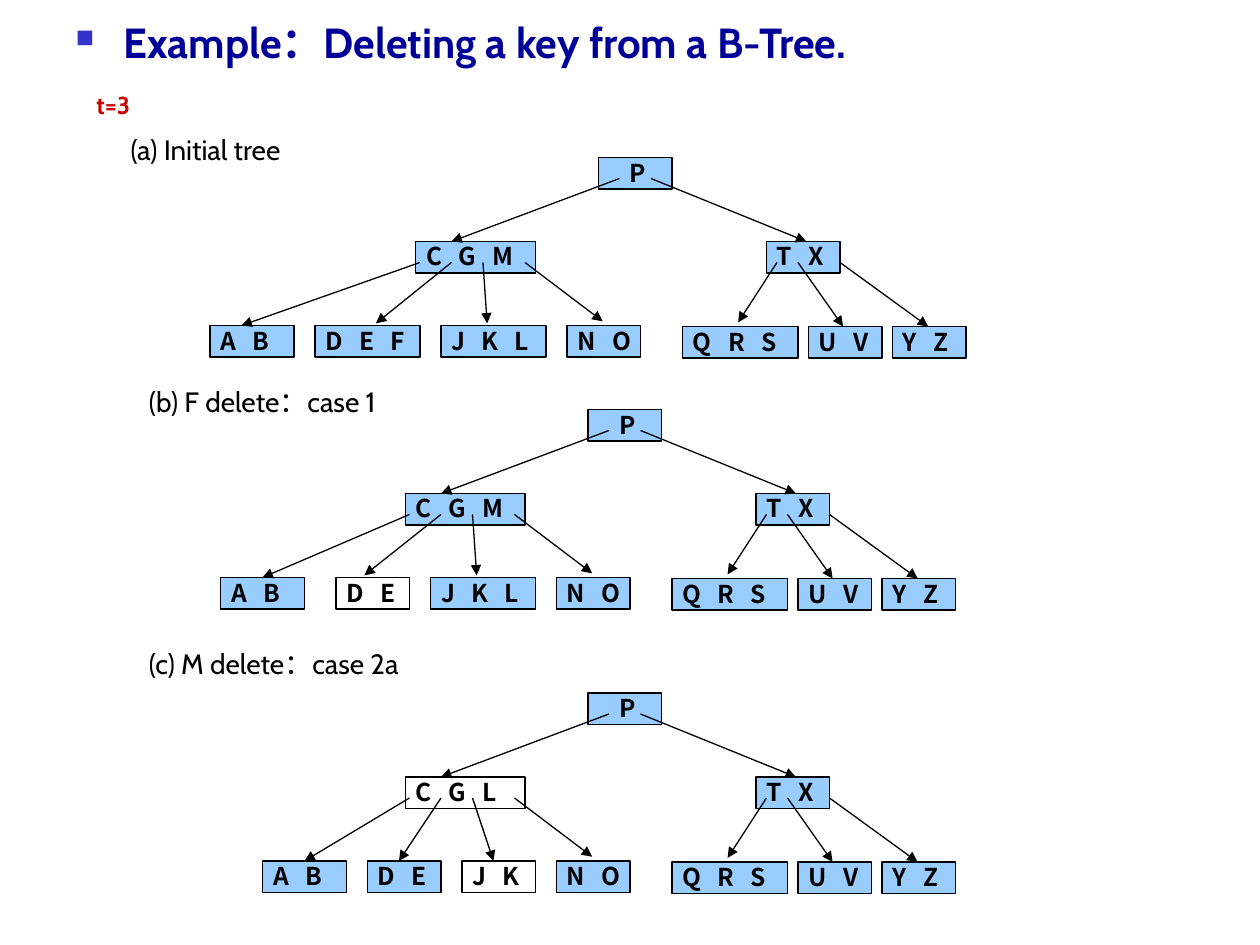
"""Build a slide showing key deletions from a B-tree."""

from dataclasses import dataclass, replace

from lxml.etree import SubElement
from pptx import Presentation
from pptx.dml.color import RGBColor
from pptx.enum.shapes import MSO_CONNECTOR, MSO_SHAPE
from pptx.enum.text import MSO_ANCHOR, MSO_AUTO_SIZE, PP_ALIGN
from pptx.oxml.ns import qn
from pptx.slide import Slide
from pptx.text.text import TextFrame
from pptx.util import Inches, Length, Pt


@dataclass(frozen=True)
class Theme:
    """Colours, fonts and sizes of the slide."""

    title: str = "000099"
    bullet: str = "3333CC"
    accent: str = "CC0000"
    ink: str = "000000"
    node: str = "99CCFF"
    text_font: str = "Cabin"
    key_font: str = "Noto Sans CJK TC"
    title_size: float = 24
    label_size: float = 16
    key_size: float = 14
    key_spacing: float = 3.1
    line_width: float = 0.75


@dataclass(frozen=True)
class Node:
    """A tree node in grid units, with the tip of the arrow that reaches it."""

    keys: str
    column: float
    row: float
    width: float
    tip: tuple[float, float] = (0, 0)
    changed: bool = False
    indent: float = 1


@dataclass(frozen=True)
class Tree:
    """A labelled tree, shifted as a whole on the grid."""

    label: str
    label_at: tuple[float, float]
    shift: tuple[float, float]
    left: Node
    left_leaves: list[Node]


THEME = Theme()
UNIT = 1 / 12
NODE_HEIGHT = 3
ROOT = Node("P", 57, 15, 7, indent=3)
LEFT = Node("C G M", 39.6, 23, 11.4, (43, 23))
RIGHT = Node("T X", 73, 23, 7, (76.8, 23))
J_K_L = Node("J K L", 42, 31, 10, (46.4, 30.8))
N_O = Node("N O", 54, 31, 7, (57.4, 30.6))
RIGHT_LEAVES = [
    Node("Q R S", 65, 31.1, 11, (70.3, 30.7)),
    Node("U V", 77, 31.1, 7, (80.3, 31.1)),
    Node("Y Z", 85, 31.1, 7, (88.4, 31.1)),
]
ROOT_STARTS = [(59, 17), (62, 17)]
LEFT_STARTS = [(40, 25), (43, 25), (46, 25), (50, 25)]
RIGHT_STARTS = [(74, 25), (76, 25), (80, 25)]
TREES = [
    Tree("(a) Initial tree", (11.25, 12), (0, 0), LEFT, [
        Node("A B", 20, 31, 8, (23, 31)),
        Node("D E F", 30, 31, 10, (35.8, 30.8)),
        J_K_L,
        N_O,
    ]),
    Tree("(b) F delete：case 1", (13, 36), (-1, 24), LEFT, [
        Node("A B", 22, 31, 8, (26, 31)),
        Node("D E", 33, 31, 7, (35.7, 30.8), changed=True),
        J_K_L,
        N_O,
    ]),
    Tree("(c) M delete：case 2a", (13, 61), (-1, 51), replace(LEFT, keys="C G L", changed=True), [
        Node("A B", 26, 31, 8, (30, 31)),
        Node("D E", 36, 31, 7, (39, 31)),
        Node("J K", 45, 31, 7, (48, 31), changed=True),
        N_O,
    ]),
]


def grid(units: float) -> Length:
    """Turn grid units into a length."""
    return Inches(units * UNIT)


def write(frame: TextFrame, text: str, *, size: float, color: str = THEME.ink,
          font: str = THEME.text_font, bold: bool = False, spacing: float = 0) -> None:
    """Put one left-aligned formatted run at the top of a text frame."""
    frame.vertical_anchor = MSO_ANCHOR.TOP
    paragraph = frame.paragraphs[0]
    paragraph.alignment = PP_ALIGN.LEFT
    run = paragraph.add_run()
    run.text = text
    run.font.name = font
    run.font.size = Pt(size)
    run.font.bold = bold
    run.font.color.rgb = RGBColor.from_string(color)
    properties = run.font._element
    SubElement(properties, qn("a:ea"), typeface=THEME.key_font)
    if spacing:
        properties.set("spc", str(round(spacing * 100)))


def add_title(slide: Slide, text: str) -> None:
    """Format the title placeholder as a bulleted heading."""
    title = slide.shapes.title
    title.left, title.top, title.width, title.height = map(grid, (6, 1, 104, 7))
    frame = title.text_frame
    frame.auto_size = MSO_AUTO_SIZE.NONE
    write(frame, text, size=THEME.title_size, color=THEME.title, bold=True)
    paragraph = frame.paragraphs[0]
    paragraph.space_before = Pt(THEME.title_size * 0.2)
    properties = paragraph._p.get_or_add_pPr()
    properties.set("marL", str(Inches(0.38)))
    properties.set("indent", str(Inches(-0.38)))
    color = SubElement(properties, qn("a:buClr"))
    SubElement(color, qn("a:srgbClr"), val=THEME.bullet)
    SubElement(properties, qn("a:buSzPct"), val="60000")
    SubElement(properties, qn("a:buChar"), char="■")


def add_label(slide: Slide, text: str, at: tuple[float, float], **text_format) -> None:
    """Add an unwrapped line of text at a grid position."""
    label = slide.shapes.add_textbox(grid(at[0]), grid(at[1]), grid(27), grid(4.4))
    label.text_frame.word_wrap = False
    write(label.text_frame, text, **text_format)


def add_node(slide: Slide, node: Node, shift: tuple[float, float]) -> None:
    """Draw a node box holding its keys."""
    box = slide.shapes.add_shape(
        MSO_SHAPE.RECTANGLE, grid(node.column + shift[0]), grid(node.row + shift[1]),
        grid(node.width), grid(NODE_HEIGHT))
    box.shadow.inherit = False
    if node.changed:
        box.fill.background()
    else:
        box.fill.solid()
        box.fill.fore_color.rgb = RGBColor.from_string(THEME.node)
    box.line.color.rgb = RGBColor.from_string(THEME.ink)
    box.line.width = Pt(THEME.line_width)
    frame = box.text_frame
    frame.word_wrap = False
    frame.margin_left = grid(node.indent)
    frame.margin_top = frame.margin_right = frame.margin_bottom = 0
    write(frame, node.keys, size=THEME.key_size, font=THEME.key_font, bold=True,
          spacing=THEME.key_spacing)


def add_arrow(slide: Slide, start: tuple[float, float], tip: tuple[float, float],
              shift: tuple[float, float]) -> None:
    """Draw an arrow from a parent to a child."""
    ends = [grid(value + offset) for point in (start, tip) for value, offset in zip(point, shift)]
    arrow = slide.shapes.add_connector(MSO_CONNECTOR.STRAIGHT, *ends)
    arrow.line.color.rgb = RGBColor.from_string(THEME.ink)
    arrow.line.width = Pt(THEME.line_width)
    SubElement(arrow.line._get_or_add_ln(), qn("a:tailEnd"), type="triangle")
    SubElement(arrow._element.spPr, qn("a:effectLst"))


def add_tree(slide: Slide, tree: Tree) -> None:
    """Draw a tree with its label, nodes and arrows."""
    add_label(slide, tree.label, tree.label_at, size=THEME.label_size)
    children = [tree.left, RIGHT, *tree.left_leaves, *RIGHT_LEAVES]
    for node in [ROOT, *children]:
        add_node(slide, node, tree.shift)
    for start, child in zip(ROOT_STARTS + LEFT_STARTS + RIGHT_STARTS, children):
        add_arrow(slide, start, child.tip, tree.shift)


def main() -> None:
    """Build and save the presentation."""
    presentation = Presentation()
    presentation.slide_width, presentation.slide_height = grid(120), grid(90)
    slide = presentation.slides.add_slide(presentation.slide_layouts[5])
    add_title(slide, "Example：Deleting a key from a B-Tree.")
    add_label(slide, "t=3", (8, 8), size=THEME.key_size, color=THEME.accent, bold=True)
    for tree in TREES:
        add_tree(slide, tree)
    presentation.save("out.pptx")


if __name__ == "__main__":
    main()
